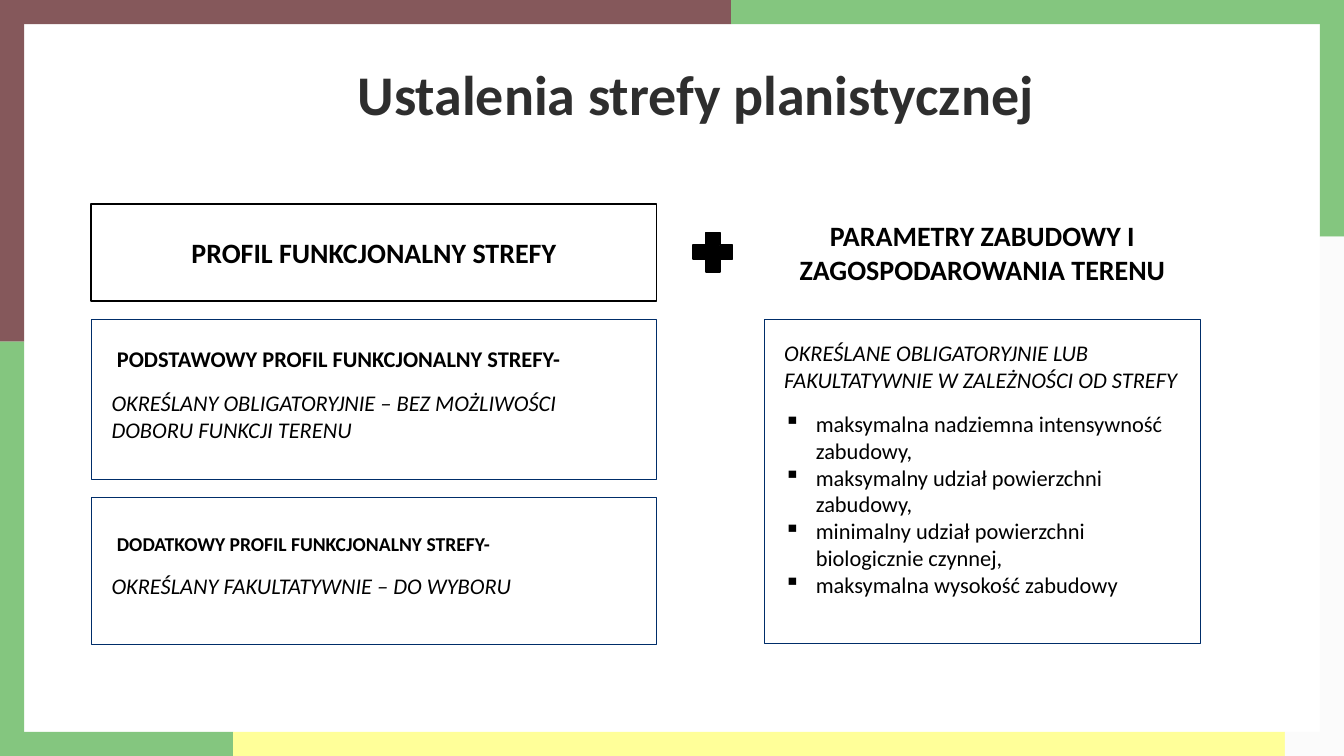
from lxml.etree import SubElement
from pptx import Presentation
from pptx.dml.color import RGBColor
from pptx.enum.shapes import MSO_SHAPE
from pptx.enum.text import MSO_ANCHOR, PP_ALIGN
from pptx.oxml.ns import qn
from pptx.util import Inches, Pt

HUES = {"wine": "85585B", "green": "84C67F", "lemon": "FFFF99", "pale": "FBFBFB",
        "ink": "000000", "gray": "2E2E2E", "navy": "002D69"}


class Deck:
    def __init__(self, wide, high, font):
        self.file = Presentation()
        self.file.slide_width = Inches(wide)
        self.file.slide_height = Inches(high)
        self.font = font
        self.slide = self.file.slides.add_slide(self.file.slide_layouts[6])

    def hue(self, name):
        return RGBColor.from_string(HUES[name])

    def wide(self, share):
        return round(self.file.slide_width * share / 100)

    def high(self, share):
        return round(self.file.slide_height * share / 100)

    def area(self, left, top, width, height):
        return self.wide(left), self.high(top), self.wide(width), self.high(height)

    def shape(self, area, fill=None, line=None, weight=1, kind=MSO_SHAPE.RECTANGLE):
        item = self.slide.shapes.add_shape(kind, *self.area(*area))
        item.shadow.inherit = False
        if fill:
            item.fill.solid()
            item.fill.fore_color.rgb = self.hue(fill)
        else:
            item.fill.background()
        if line:
            item.line.color.rgb = self.hue(line)
            item.line.width = Pt(weight)
        else:
            item.line.fill.background()
        return item

    def label(self, area):
        return self.slide.shapes.add_textbox(*self.area(*area))

    def frame(self, item, pad, anchor=MSO_ANCHOR.MIDDLE):
        body = item.text_frame
        body.word_wrap = True
        body.vertical_anchor = anchor
        left, top, right, low = pad
        body.margin_left, body.margin_right = self.wide(left), self.wide(right)
        body.margin_top, body.margin_bottom = self.high(top), self.high(low)

    def text(self, item, words, size=24, color="ink", bold=False, italic=False,
             align=PP_ALIGN.LEFT, after=0, pitch=None, indent=0, bullet=None):
        body = item.text_frame
        para = body.paragraphs[0]
        if para.runs:
            para = body.add_paragraph()
        para.alignment = align
        para.space_after = Pt(after)
        if pitch:
            para.line_spacing = Pt(pitch)
        props = para._p.get_or_add_pPr()
        if bullet:
            props.set("marL", str(self.wide(indent)))
            props.set("indent", str(-self.wide(indent)))
            SubElement(props, qn("a:buChar")).set("char", bullet)
        elif indent:
            props.set("indent", str(self.wide(indent)))
        run = para.add_run()
        run.text = words
        run.font.name = self.font
        run.font.size = Pt(size)
        run.font.bold = bold
        run.font.italic = italic
        run.font.color.rgb = self.hue(color)


def main():
    deck = Deck(20, 11.25, "Calibri")
    side, edge = 1.8, 3.2
    for start, end, color in ((0, 45.2, "wine"), (45.2, 100, "green")):
        deck.shape((0, start, side, end - start), color)
    for start, end, color in ((0, 31.3, "green"), (31.3, 100, "pale")):
        deck.shape((100 - side, start, side, end - start), color)
    for start, end, color in ((0, 54.4, "wine"), (54.4, 100, "green")):
        deck.shape((start, 0, end - start, edge), color)
    for start, end, color in ((0, 17.35, "green"), (17.35, 95.6, "lemon"),
                              (95.6, 100, "pale")):
        deck.shape((start, 100 - edge, end - start, edge), color)

    title = deck.label((10.7, 6.4, 82.15, 10.15))
    deck.frame(title, (0, 0, 0, 0), MSO_ANCHOR.TOP)
    deck.text(title, "Ustalenia strefy planistycznej", 60, "gray", True,
              align=PP_ALIGN.CENTER, pitch=84)

    left, right, broad, slim = 6.8, 56.85, 42.05, 32.5
    head, body, tall = 26.95, 42.22, 12.9
    profile = deck.shape((left, head, broad, tall), line="ink", weight=2)
    limits = deck.label((right, head, slim, tall))
    for item, words in ((profile, "PROFIL FUNKCJONALNY STREFY"),
                        (limits, "PARAMETRY ZABUDOWY I ZAGOSPODAROWANIA TERENU")):
        deck.frame(item, (0.5, 0.45, 0.5, 0.45))
        deck.text(item, words, 30, bold=True, align=PP_ALIGN.CENTER, after=9)

    plus = deck.shape((51.55, 30.75, 2.95, 5.25), "ink", "ink", 2, MSO_SHAPE.CROSS)
    plus.adjustments[0] = 0.324

    cards = (
        (body, 21.15, 24, "PODSTAWOWY PROFIL FUNKCJONALNY STREFY-",
         "OKREŚLANY OBLIGATORYJNIE – BEZ MOŻLIWOŚCI DOBORU FUNKCJI TERENU"),
        (65.78, 19.45, 21, "DODATKOWY PROFIL FUNKCJONALNY STREFY-",
         "OKREŚLANY FAKULTATYWNIE – DO WYBORU"),
    )
    for top, height, size, name, note in cards:
        card = deck.shape((left, top, broad, height), line="navy")
        deck.frame(card, (1.5, 2.67, 1.5, 4.05))
        deck.text(card, name, size, bold=True, after=18, indent=0.4)
        deck.text(card, note, italic=True)

    rules = deck.shape((right, body, slim, 42.95), line="navy")
    deck.frame(rules, (1.5, 2.67, 1.5, 0.45), MSO_ANCHOR.TOP)
    deck.text(rules, "OKREŚLANE OBLIGATORYJNIE LUB FAKULTATYWNIE W ZALEŻNOŚCI OD STREFY",
              italic=True, after=18)
    for words in ("maksymalna nadziemna intensywność zabudowy,",
                  "maksymalny udział powierzchni zabudowy,",
                  "minimalny udział powierzchni biologicznie czynnej,",
                  "maksymalna wysokość zabudowy"):
        deck.text(rules, words, indent=2.35, bullet="▪")

    deck.file.save("out.pptx")


if __name__ == "__main__":
    main()
